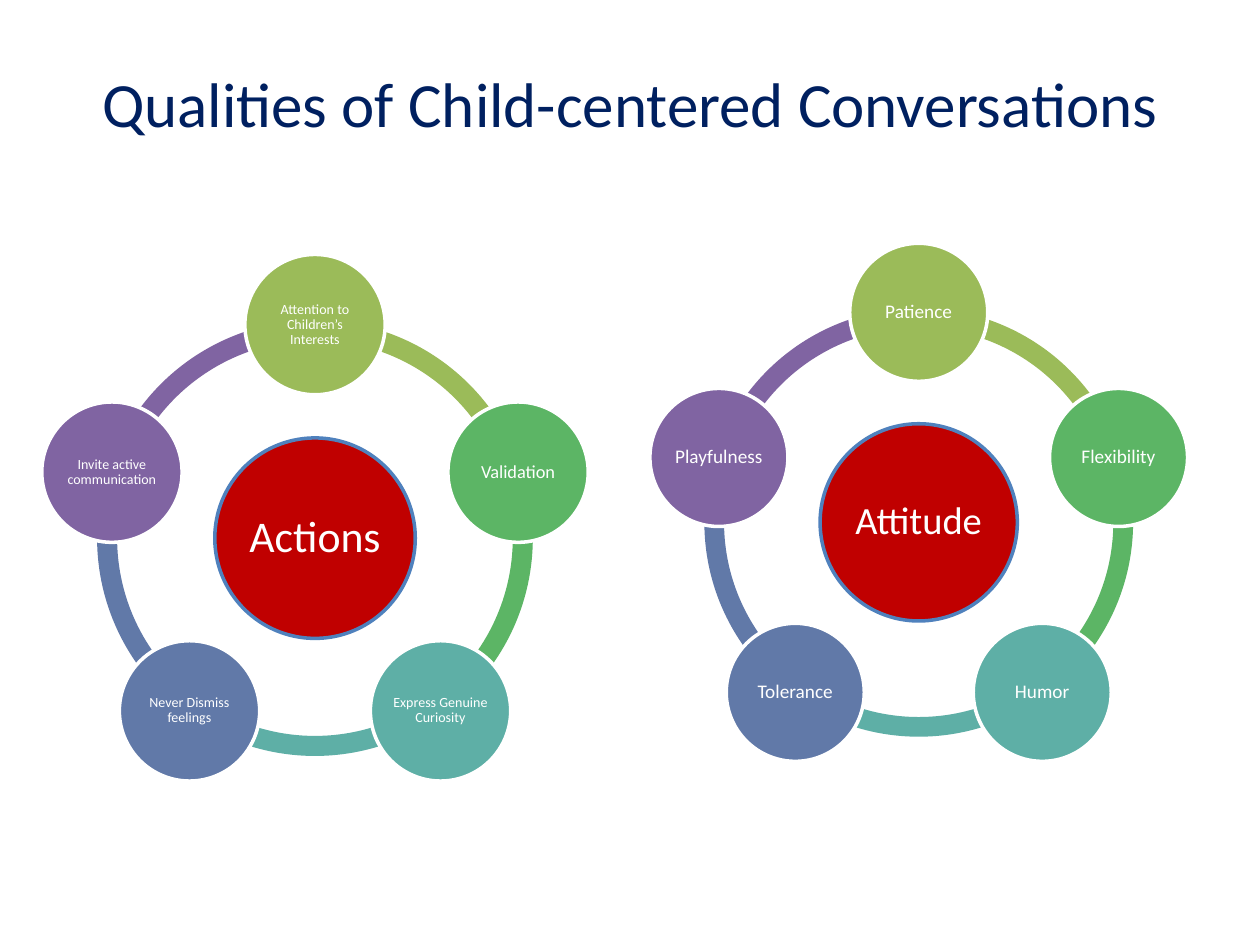
from math import cos, radians, sin

from pptx import Presentation
from pptx.dml.color import RGBColor
from pptx.enum.shapes import MSO_SHAPE
from pptx.enum.text import MSO_ANCHOR, PP_ALIGN
from pptx.util import Pt

HUES = ["9BBB59", "5CB565", "5EAFA6", "6179A8", "8064A2"]
STEP = 360 / len(HUES)
TOP = 270


def color(code):
    return RGBColor.from_string(code)


class Deck:
    """Holds the style and the current slide, and draws its elements."""

    font = "Calibri"
    white = "FFFFFF"

    def __init__(self):
        self.prs = Presentation()
        self.prs.slide_width, self.prs.slide_height = Pt(720), Pt(540)
        self.slide = self.prs.slides.add_slide(self.prs.slide_layouts[5])

    def label(self, frame, text, size, hue):
        frame.word_wrap = True
        frame.vertical_anchor = MSO_ANCHOR.MIDDLE
        para = frame.paragraphs[0]
        para.text = text
        para.alignment = PP_ALIGN.CENTER
        para.font.name = self.font
        para.font.size = Pt(size)
        para.font.color.rgb = color(hue)
        return para

    def title(self, text):
        box = self.slide.shapes.title
        box.left, box.top, box.width, box.height = Pt(36), Pt(21.6), Pt(648), Pt(74.2)
        self.label(box.text_frame, text, 36, "002060")

    def round(self, group, kind, x, y, size, hue):
        shape = group.shapes.add_shape(
            kind, Pt(x - size / 2), Pt(y - size / 2), Pt(size), Pt(size))
        shape.shadow.inherit = False
        shape.fill.solid()
        shape.fill.fore_color.rgb = color(hue)
        return shape

    def arc(self, group, x, y, size, start, hue):
        shape = self.round(group, MSO_SHAPE.BLOCK_ARC, x, y, size, hue)
        shape.line.fill.background()
        ends = start % 360, (start + STEP) % 360
        for i, angle in enumerate(ends):
            shape.adjustments[i] = angle * 0.6
        shape.adjustments[2] = 0.046

    def disc(self, group, x, y, size, hue, edge, text, points, inset):
        shape = self.round(group, MSO_SHAPE.OVAL, x, y, size, hue)
        shape.line.color.rgb = color(edge)
        shape.line.width = Pt(2)
        frame = shape.text_frame
        frame.margin_left = frame.margin_right = Pt(inset)
        frame.margin_top = frame.margin_bottom = Pt(inset)
        self.label(frame, text, points, self.white).line_spacing = 0.9

    def wheel(self, x, y, size, hub, points, nodes):
        group = self.slide.shapes.add_group_shape()
        for i, hue in reversed(list(enumerate(HUES))):
            self.arc(group, x, y, size, TOP + i * STEP, hue)
        self.disc(group, x, y, size * 0.46, "C00000", "4F81BD", hub, points, 2)
        reach = size * 0.49
        for i, (hue, (text, small)) in enumerate(zip(HUES, nodes)):
            turn = radians(TOP + i * STEP)
            self.disc(group, x + reach * cos(turn), y + reach * sin(turn),
                      size * 0.322, hue, self.white, text, small, 0.5)


def main():
    deck = Deck()
    deck.title("Qualities of Child-centered Conversations")
    deck.wheel(180, 307.5, 249, "Actions", 25, [
        ("Attention to Children’s Interests", 8),
        ("Validation", 10.5),
        ("Express Genuine Curiosity", 8),
        ("Never Dismiss feelings", 8),
        ("Invite active communication", 8),
    ])
    moods = ["Patience", "Flexibility", "Humor", "Tolerance", "Playfulness"]
    deck.wheel(525, 298.5, 245, "Attitude", 22, [(mood, 11) for mood in moods])
    deck.prs.save("out.pptx")


if __name__ == "__main__":
    main()
